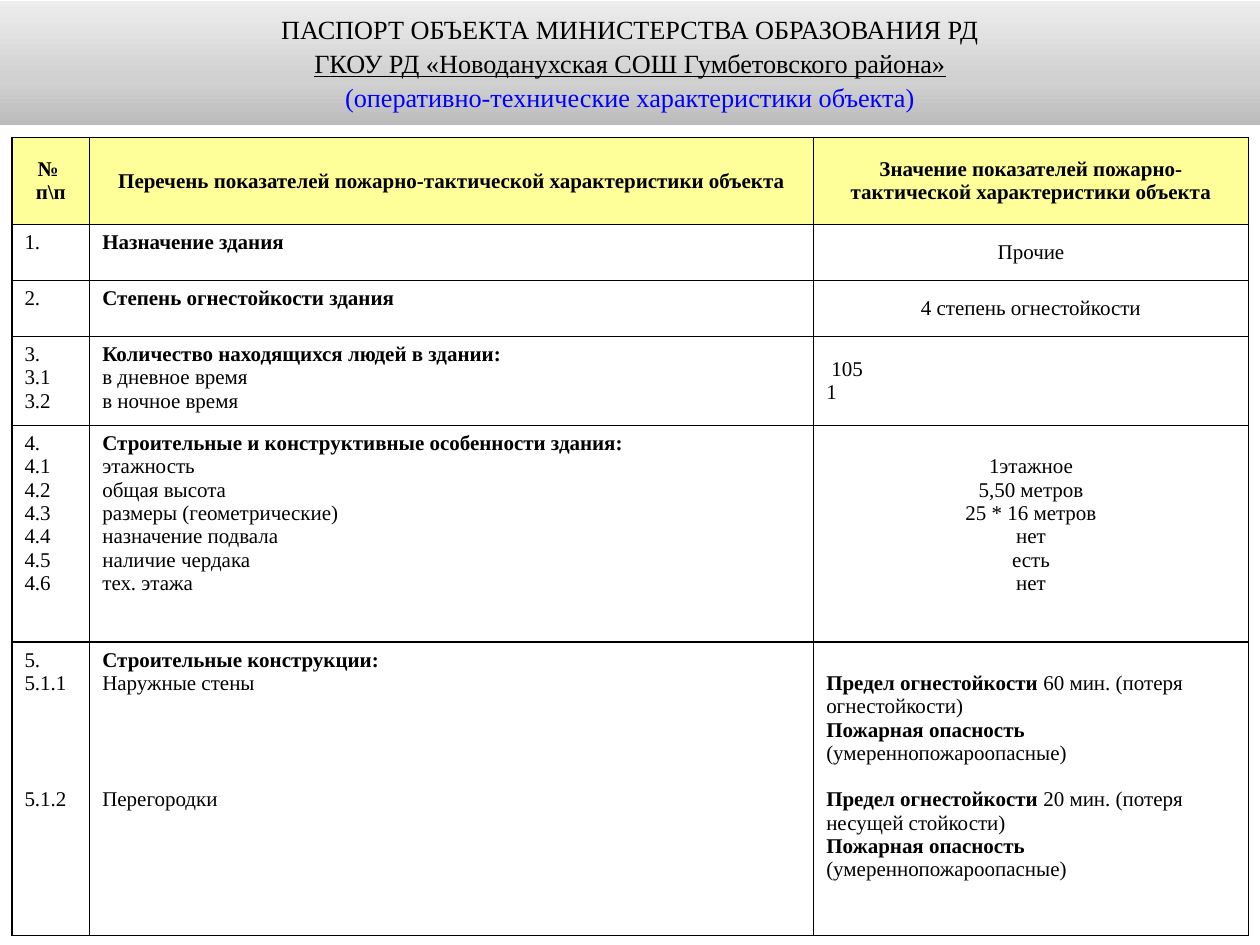
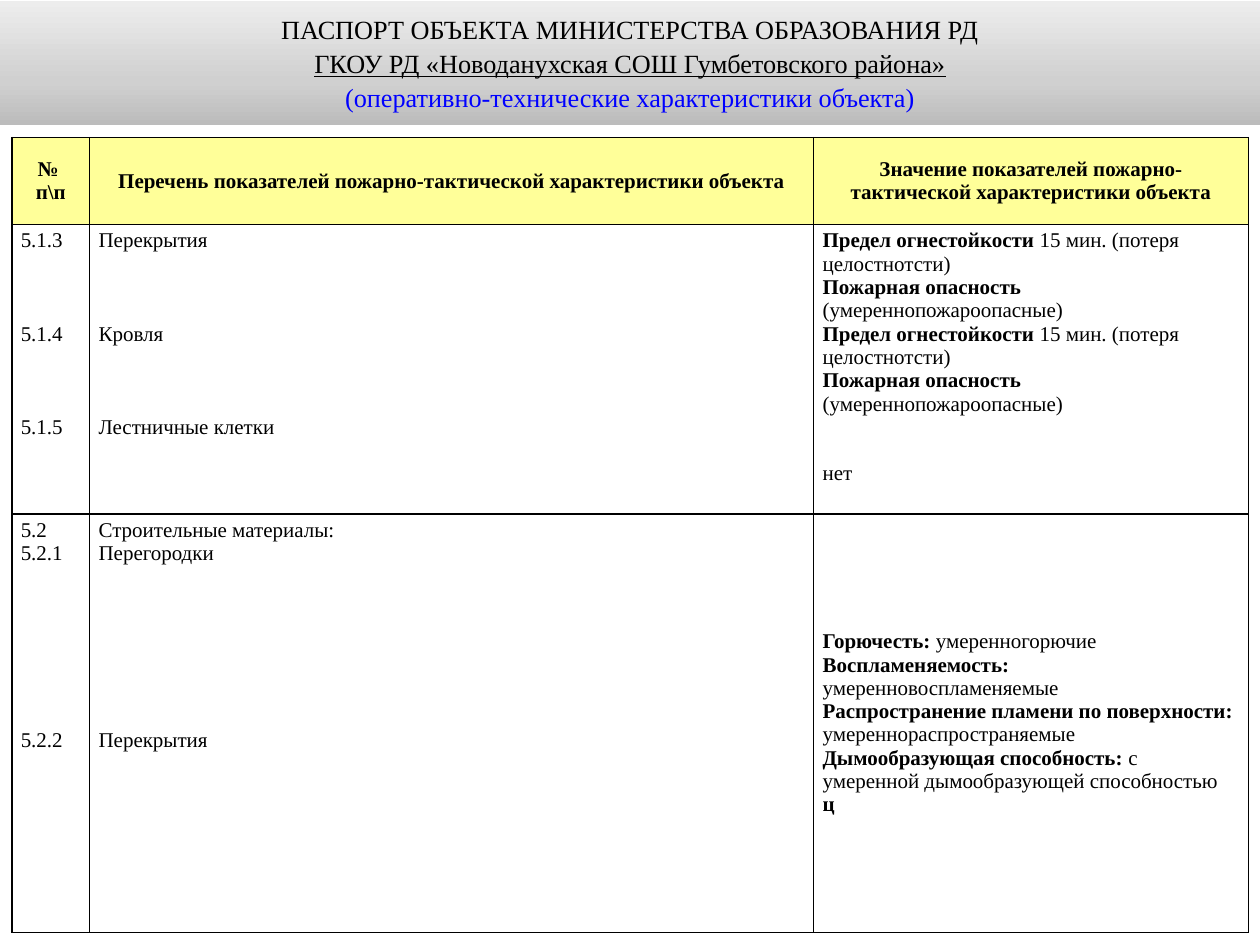
"""Builds two slides with the fire-safety passport of a school building."""
from copy import deepcopy

from lxml import etree
from pptx import Presentation
from pptx.dml.color import RGBColor
from pptx.enum.text import MSO_ANCHOR as ANCHOR, MSO_AUTO_SIZE as AUTO, PP_ALIGN as ALIGN
from pptx.oxml.ns import qn
from pptx.util import Pt

BLACK = RGBColor(0x00, 0x00, 0x00)
WHITE = RGBColor(0xFF, 0xFF, 0xFF)
BLUE = RGBColor(0x00, 0x00, 0xFF)
YELLOW = RGBColor(0xFF, 0xFF, 0x99)
BAND_STOPS = [(0, RGBColor(0xBC, 0xBC, 0xBC)),
              (0.35, RGBColor(0xD0, 0xD0, 0xD0)),
              (1, RGBColor(0xED, 0xED, 0xED))]

FONT = "Times New Roman"
LINE = 13.3
COLS = [44.5, 413.7, 248.4]

TITLE = [
    ("ПАСПОРТ ОБЪЕКТА МИНИСТЕРСТВА ОБРАЗОВАНИЯ РД", {}),
    ("ГКОУ РД «Новоданухская СОШ Гумбетовского района»", {"underline": True}),
    ("(оперативно-технические характеристики объекта)", {"color": BLUE}),
]
HEADER = [
    ["№ |", "п\\п|"],
    ["Перечень показателей пожарно-тактической характеристики объекта|"],
    ["Значение показателей пожарно-тактической характеристики объекта|"],
]
LIMIT = "Предел огнестойкости |"
HAZARD = "Пожарная опасность |(умереннопожароопасные)"
ROOF_LIMIT = LIMIT + "15 мин. (потеря целостнотсти)"

# Each line is text or (blank lines above, text); the part before "|" is bold.
BUILDING = [
    [["1."], ["Назначение здания|"], ["Прочие"]],
    [["2."], ["Степень огнестойкости здания|"], ["4 степень огнестойкости"]],
    [["3.", "3.1", "3.2"],
     ["Количество находящихся людей в здании:|", "в дневное время", "в ночное время"],
     [" 105", "1"]],
    [["4.", "4.1", "4.2", "4.3", "4.4", "4.5", "4.6"],
     ["Строительные и конструктивные особенности здания:|", "этажность", "общая высота",
      "размеры (геометрические)", "назначение подвала", "наличие чердака", "тех. этажа"],
     [(1, "1этажное"), "5,50 метров", "25 * 16 метров", "нет", "есть", "нет"]],
    [["5.", "5.1.1", (4, "5.1.2")],
     ["Строительные конструкции:|", "Наружные стены", (4, "Перегородки")],
     [(1, LIMIT + "60 мин. (потеря огнестойкости)"), HAZARD,
      (1, LIMIT + "20 мин. (потеря несущей стойкости)"), HAZARD]],
]
STRUCTURE = [
    [["5.1.3", (3, "5.1.4"), (3, "5.1.5")],
     ["Перекрытия", (3, "Кровля"), (3, "Лестничные клетки")],
     [ROOF_LIMIT, HAZARD, ROOF_LIMIT, HAZARD, (2, "нет")]],
    [["5.2", "5.2.1", (7, "5.2.2")],
     ["Строительные материалы:", "Перегородки", (7, "Перекрытия")],
     ["Горючесть: |умеренногорючие",
      "Воспламеняемость: |умеренновоспламеняемые",
      "Распространение пламени по поверхности:|",
      "умереннораспространяемые",
      "Дымообразующая способность: |с умеренной дымообразующей способностью",
      "ц|"]],
]


def write(p, text, size=12, color=BLACK, bold=False, underline=False):
    r = p.add_run()
    r.text = text
    r.font.name = FONT
    r.font.size = Pt(size)
    r.font.color.rgb = color
    r.font.bold = bold
    r.font.underline = underline


def paragraph(tf, i):
    return tf.add_paragraph() if i else tf.paragraphs[0]


class Passport:
    def __init__(self):
        self.prs = Presentation()
        self.prs.slide_width, self.prs.slide_height = Pt(720), Pt(540)
        self.slide = None

    def new_slide(self):
        self.slide = self.prs.slides.add_slide(self.prs.slide_layouts[5])
        self.title()

    def title(self):
        sp = self.slide.shapes.title
        sp.left, sp.top, sp.width, sp.height = Pt(0), Pt(0.7), Pt(720), Pt(70.6)
        self.gradient(sp)
        tf = sp.text_frame
        tf.word_wrap = True
        tf.auto_size = AUTO.NONE
        tf.vertical_anchor = ANCHOR.MIDDLE
        for i, (text, fmt) in enumerate(TITLE):
            p = paragraph(tf, i)
            p.alignment = ALIGN.CENTER
            p.space_before = Pt(1.5 if i else 0)
            write(p, text, size=15, **fmt)

    def gradient(self, sp):
        sp.fill.gradient()
        sp.fill.gradient_angle = 90
        stops = sp._element.spPr.find(qn("a:gradFill")).find(qn("a:gsLst"))
        stops.append(deepcopy(stops[0]))
        for stop, (position, color) in zip(sp.fill.gradient_stops, BAND_STOPS):
            stop.position = position
            stop.color.rgb = color

    def table(self, rows, heights, inset, centred=(), middle=()):
        """Draws the header and rows; centred and middle name rows whose value is aligned so."""
        rows = [HEADER] + rows
        table = self.slide.shapes.add_table(
            len(rows), len(COLS), Pt(6.8), Pt(78.6), Pt(sum(COLS)), Pt(sum(heights))).table
        table.first_row = table.horz_banding = False
        for column, width in zip(table.columns, COLS):
            column.width = Pt(width)
        for i, (row, height) in enumerate(zip(rows, heights)):
            table.rows[i].height = Pt(height)
            for j, lines in enumerate(row):
                value = j == len(COLS) - 1
                self.cell(table.cell(i, j), lines, inset,
                          fill=WHITE if i else YELLOW,
                          align=ALIGN.CENTER if not i or value and i in centred else ALIGN.LEFT,
                          anchor=ANCHOR.MIDDLE if not i or value and i in middle else ANCHOR.TOP)

    def cell(self, cell, lines, inset, fill, align, anchor):
        side, edge = inset
        cell.margin_left = cell.margin_right = Pt(side)
        cell.margin_top = cell.margin_bottom = Pt(edge)
        cell.vertical_anchor = anchor
        cell.fill.solid()
        cell.fill.fore_color.rgb = fill
        self.borders(cell)
        for i, line in enumerate(lines):
            gap, text = line if isinstance(line, tuple) else (0, line)
            p = paragraph(cell.text_frame, i)
            p.alignment = align
            if i:
                p.space_before = Pt(gap * LINE)
            else:
                cell.margin_top = Pt(edge + gap * LINE)
            bold, _, plain = text.rpartition("|")
            if bold:
                write(p, bold, bold=True)
            if plain:
                write(p, plain)

    def borders(self, cell):
        tc_pr = cell._tc.get_or_add_tcPr()
        for i, name in enumerate(["a:lnL", "a:lnR", "a:lnT", "a:lnB"]):
            ln = etree.Element(qn(name), w=str(Pt(1)))
            solid = etree.SubElement(ln, qn("a:solidFill"))
            etree.SubElement(solid, qn("a:srgbClr"), val=str(BLACK))
            tc_pr.insert(i, ln)


def main():
    deck = Passport()
    deck.new_slide()
    deck.table(BUILDING, [49.7, 32, 32, 51, 123.7, 167.6], inset=(7.2, 3.6),
               centred=(1, 2, 4), middle=(1, 2, 3))
    deck.new_slide()
    deck.table(STRUCTURE, [49.7, 165.5, 239], inset=(5.1, 2.7), middle=(2,))
    deck.prs.save("out.pptx")


if __name__ == "__main__":
    main()
